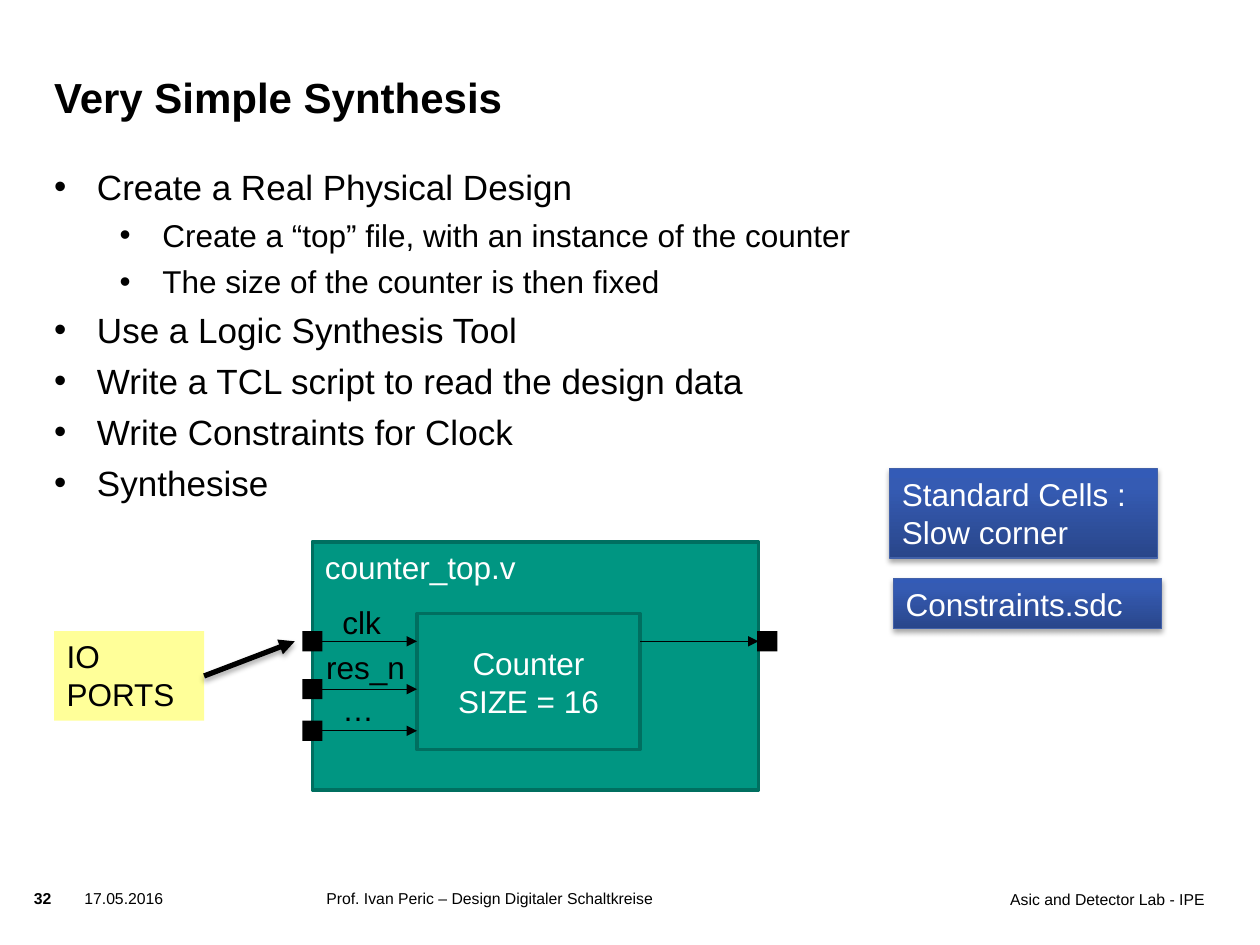
from copy import deepcopy
from dataclasses import dataclass

from lxml.etree import SubElement
from pptx import Presentation
from pptx.dml.color import RGBColor
from pptx.enum.shapes import MSO_CONNECTOR, MSO_SHAPE
from pptx.enum.text import MSO_ANCHOR, MSO_AUTO_SIZE, PP_ALIGN
from pptx.oxml.ns import qn
from pptx.util import Inches, Pt


@dataclass(frozen=True)
class Theme:
    """Colours, font and type sizes of the slide."""
    font: str = "Arial"
    ink: str = "000000"
    light: str = "FFFFFF"
    green: str = "009682"
    edge: str = "006F60"
    note: str = "FFFF99"
    blue: str = "4261A9"
    fade: tuple = ((0, "29468A"), (0.8, "355BB3"), (1, "335BB7"))
    title: int = 24
    main: int = 20
    text: int = 18
    small: int = 9


THEME = Theme()


def rgb(code):
    """Turn a hex code into a colour."""
    return RGBColor.from_string(code)


def write(shape, text, size=THEME.text, color=THEME.ink, bold=False, align=PP_ALIGN.LEFT,
          anchor=MSO_ANCHOR.TOP, inset=True, grow=False):
    """Fill a shape with text, one paragraph for each line, and return the paragraphs."""
    frame = shape.text_frame
    frame.word_wrap = True
    frame.auto_size = MSO_AUTO_SIZE.SHAPE_TO_FIT_TEXT if grow else MSO_AUTO_SIZE.NONE
    frame.vertical_anchor = anchor
    if not inset:
        frame.margin_left = frame.margin_right = frame.margin_top = frame.margin_bottom = 0
    for i, line in enumerate(text.split("\n")):
        para = frame.paragraphs[0] if i == 0 else frame.add_paragraph()
        para.alignment = align
        run = para.add_run()
        run.text = line
        font = run.font
        font.name, font.size, font.bold = THEME.font, Pt(size), bold
        font.color.rgb = rgb(color)
    return frame.paragraphs


def label(slide, box, text, **style):
    """Add a text box and return its paragraphs."""
    return write(slide.shapes.add_textbox(*box), text, **style)


def block(slide, box, fill, line=None, width=2):
    """Add a plain filled rectangle."""
    shape = slide.shapes.add_shape(MSO_SHAPE.RECTANGLE, *box)
    shape.shadow.inherit = False
    shape.fill.solid()
    shape.fill.fore_color.rgb = rgb(fill)
    if line:
        shape.line.color.rgb = rgb(line)
        shape.line.width = Pt(width)
    else:
        shape.line.fill.background()
    return shape


def shade(props):
    """Put a soft drop shadow into an effect list."""
    shadow = SubElement(props.find(qn("a:effectLst")), qn("a:outerShdw"), blurRad="40000",
                        dist="23000", dir="5400000", rotWithShape="0")
    color = SubElement(shadow, qn("a:srgbClr"), val=THEME.ink)
    SubElement(color, qn("a:alpha"), val="35000")


def arrow(slide, start, end, width=0.75, soft=False):
    """Draw a line with an arrowhead at its end."""
    link = slide.shapes.add_connector(MSO_CONNECTOR.STRAIGHT, *start, *end)
    link.line.color.rgb = rgb(THEME.ink)
    link.line.width = Pt(width)
    props = link._element.spPr
    SubElement(props.find(qn("a:ln")), qn("a:tailEnd"), type="triangle")
    SubElement(props, qn("a:effectLst"))
    if soft:
        shade(props)


def body(slide, box, items):
    """Write a bullet list of level and text pairs."""
    shape = slide.shapes.add_textbox(*box)
    paras = write(shape, "\n".join(text for _, text in items), inset=False)
    for i, (para, (level, _)) in enumerate(zip(paras, items)):
        para.level = level
        props = para._p.get_or_add_pPr()
        props.set("marL", str(Inches((0.34, 0.86)[level])))
        props.set("indent", str(Inches(-0.34)))
        SubElement(props, qn("a:buFont"), typeface=THEME.font)
        SubElement(props, qn("a:buChar"), char="•")
        para.space_before = Pt(5 if i else 0)
        para.runs[0].font.size = Pt((THEME.main, THEME.text)[level])


def card(slide, box, text):
    """Draw a shaded blue card for an input file."""
    shape = block(slide, box, THEME.blue, THEME.blue, 0.75)
    fill = shape.fill
    fill.gradient()
    stops = shape._element.spPr.find(qn("a:gradFill")).find(qn("a:gsLst"))
    stops.insert(1, deepcopy(stops[0]))
    fill.gradient_angle = 90
    for stop, (place, color) in zip(fill.gradient_stops, THEME.fade):
        stop.position = place
        stop.color.rgb = rgb(color)
    shade(shape._element.spPr)
    write(shape, text, color=THEME.light, grow=True)


def port(slide, x, y):
    """Draw a square port centred on a point."""
    side = Inches(0.16)
    block(slide, (x - side // 2, y - side // 2, side, side), THEME.ink)


def diagram(slide, box):
    """Draw the top module with its counter, signals and ports."""
    left, top, width, height = box
    right = left + width
    outer = block(slide, box, THEME.green, THEME.edge)
    write(outer, "counter_top.v", color=THEME.light)
    core = left + Inches(0.83), top + Inches(0.57), Inches(1.77), Inches(1.08)
    inner = block(slide, core, THEME.green, THEME.edge)
    write(inner, "Counter\nSIZE = 16", color=THEME.light, align=PP_ALIGN.CENTER,
          anchor=MSO_ANCHOR.MIDDLE)
    first = top + Inches(0.79)
    signals = (("clk", 0.79, 0.14, 0.44, 0.63), ("res_n", 1.17, 0.01, 0.79, 0.93),
               ("…", 1.5, 0.14, 1.13, 0.66))
    for name, drop, shift, rise, wide in signals:
        y = top + Inches(drop)
        arrow(slide, (left, y), (core[0], y))
        port(slide, left, y)
        label(slide, (left + Inches(shift), top + Inches(rise), Inches(wide), Inches(0.4)),
              name, grow=True)
    arrow(slide, (core[0] + core[2], first), (right, first))
    port(slide, right + Inches(0.07), first)


def callout(slide, box, text, end):
    """Draw a note with an arrow to a point."""
    left, top, width, height = box
    write(block(slide, box, THEME.note), text, grow=True)
    arrow(slide, (left + width, top + height // 2), end, 3, True)


def footer(slide, box):
    """Write the page number, date, lecture and group along the foot."""
    left, top, width, height = box
    parts = (("32", 0, 0.36, True), ("17.05.2016", 0.4, 0.94, False),
             ("Prof. Ivan Peric – Design Digitaler Schaltkreise", 2.32, 2.99, False))
    for text, shift, wide, bold in parts:
        label(slide, (left + Inches(shift), top, Inches(wide), height), text,
              size=THEME.small, bold=bold, inset=False)
    wide = Inches(2.99)
    label(slide, (left + width - wide, top + Inches(0.01), wide, height),
          "Asic and Detector Lab - IPE", size=THEME.small, align=PP_ALIGN.RIGHT, inset=False)


def area(*sides):
    """Give left, top, width and height as lengths."""
    return tuple(Inches(side) for side in sides)


def main():
    """Build and save the slide."""
    deck = Presentation()
    deck.slide_width, deck.slide_height = Inches(10), Inches(7.5)
    slide = deck.slides.add_slide(deck.slide_layouts[6])
    footer(slide, area(0.27, 7.05, 9.29, 0.39))
    label(slide, area(0.43, 0.36, 7.56, 0.61), "Very Simple Synthesis", size=THEME.title,
          bold=True, anchor=MSO_ANCHOR.BOTTOM, inset=False)
    body(slide, area(0.43, 1.31, 9.14, 5.35), (
        (0, "Create a Real Physical Design"),
        (1, "Create a “top” file, with an instance of the counter"),
        (1, "The size of the counter is then fixed"),
        (0, "Use a Logic Synthesis Tool"),
        (0, "Write a TCL script to read the design data"),
        (0, "Write Constraints for Clock"),
        (0, "Synthesise")))
    card(slide, area(7.09, 4.59, 2.13, 0.4), "Constraints.sdc")
    card(slide, area(7.06, 3.72, 2.13, 0.71), "Standard Cells : Slow corner")
    diagram(slide, area(2.48, 4.3, 3.54, 1.97))
    callout(slide, area(0.43, 5.01, 1.19, 0.71), "IO PORTS", area(2.34, 5.09))
    deck.save("out.pptx")


if __name__ == "__main__":
    main()
